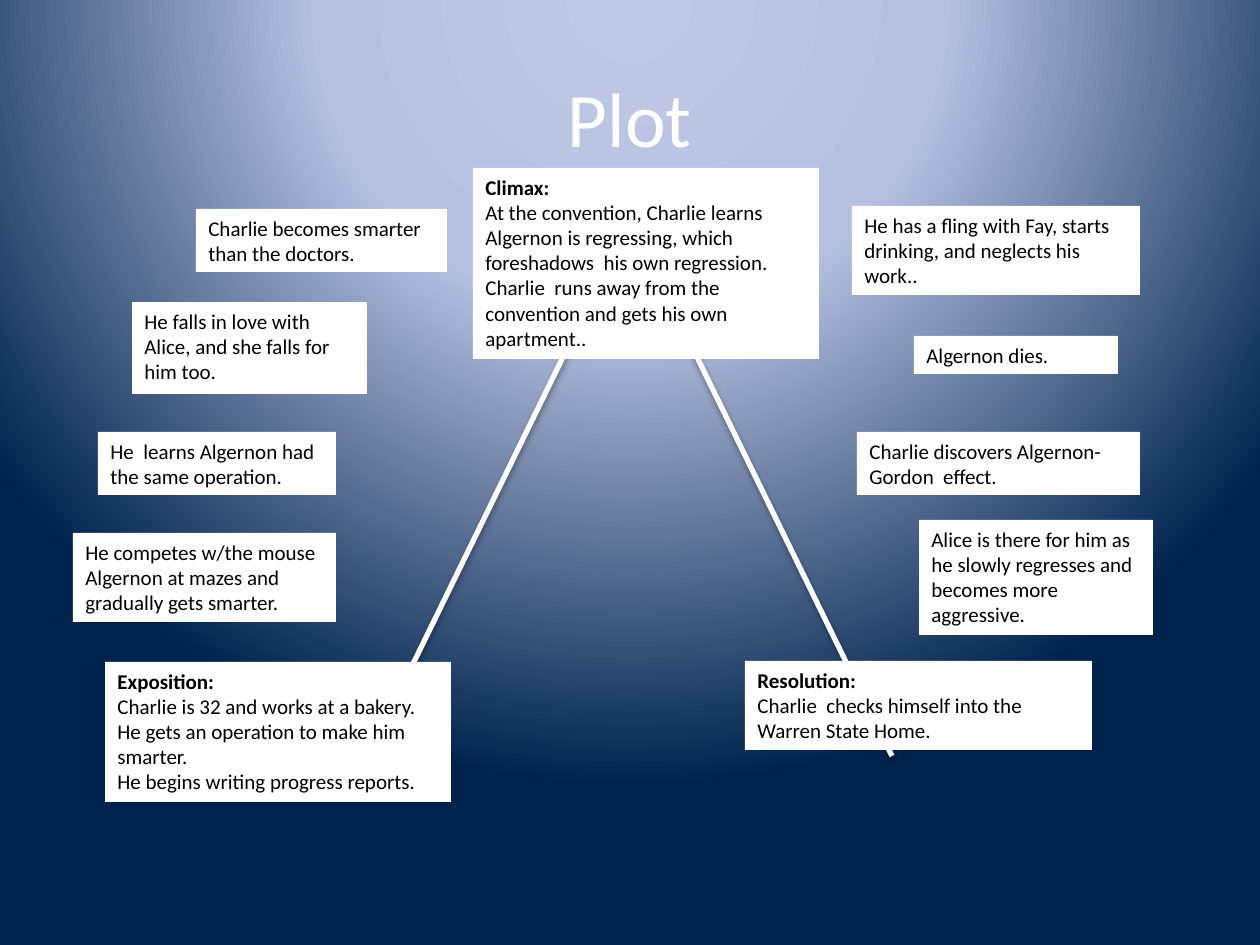
from dataclasses import dataclass

from pptx import Presentation
from pptx.dml.color import RGBColor
from pptx.enum.shapes import MSO_CONNECTOR
from pptx.enum.text import MSO_ANCHOR, MSO_AUTO_SIZE, PP_ALIGN
from pptx.oxml import parse_xml
from pptx.oxml.ns import nsdecls
from pptx.util import Pt

STRAIGHT = MSO_CONNECTOR.STRAIGHT
MIDDLE, TOP = MSO_ANCHOR.MIDDLE, MSO_ANCHOR.TOP
GROW, FIXED = MSO_AUTO_SIZE.SHAPE_TO_FIT_TEXT, MSO_AUTO_SIZE.NONE
LEFT, CENTER = PP_ALIGN.LEFT, PP_ALIGN.CENTER

EMU_PER_PX = 914400 / 126
SLIDE_WIDTH, SLIDE_HEIGHT = 1260, 945


@dataclass(frozen=True)
class Theme:
    font: str = "Calibri"
    title_size: int = 44
    body_size: int = 12
    line_width: int = 3
    white: str = "FFFFFF"
    black: str = "000000"
    glow: tuple = ((0, "BFC9E5"), (40, "B5C0E0"), (100, "00234D"))


def px(length):
    return round(length * EMU_PER_PX)


def apply(target, **values):
    for name, value in values.items():
        setattr(target, name, value)


class PlotSlide:
    def __init__(self, slide, theme):
        self.slide = slide
        self.theme = theme

    def background(self):
        """Fill the slide with a circular glow centred above its top edge."""
        stops = "".join(
            f'<a:gs pos="{percent * 1000}"><a:srgbClr val="{color}"/></a:gs>'
            for percent, color in self.theme.glow)
        self.slide.element.cSld.insert(0, parse_xml(
            f'<p:bg {nsdecls("p", "a")}><p:bgPr><a:gradFill rotWithShape="1">'
            f'<a:gsLst>{stops}</a:gsLst><a:path path="circle">'
            '<a:fillToRect l="50000" t="-80000" r="50000" b="180000"/></a:path>'
            '</a:gradFill><a:effectLst/></p:bgPr></p:bg>'))

    def text(self, bounds, lines, size, color, heading=False,
             align=LEFT, anchor=TOP, auto_size=GROW):
        box = self.slide.shapes.add_textbox(*map(px, bounds))
        frame = box.text_frame
        apply(frame, word_wrap=True, vertical_anchor=anchor, auto_size=auto_size)
        for index, line in enumerate(lines):
            para = frame.add_paragraph() if index else frame.paragraphs[0]
            para.alignment = align
            span = para.add_run()
            span.text = line
            apply(span.font, name=self.theme.font, size=Pt(size),
                  bold=heading and index == 0)
            span.font.color.rgb = RGBColor.from_string(color)
        return box

    def title(self, bounds, wording):
        self.text(bounds, [wording], self.theme.title_size, self.theme.white,
                  align=CENTER, anchor=MIDDLE, auto_size=FIXED)

    def card(self, bounds, *lines, heading=False):
        box = self.text(bounds, lines, self.theme.body_size, self.theme.black, heading)
        box.fill.solid()
        box.fill.fore_color.rgb = RGBColor.from_string(self.theme.white)

    def slope(self, start, end):
        line = self.slide.shapes.add_connector(STRAIGHT, *map(px, start + end))
        line.line.width = Pt(self.theme.line_width)
        line.line.color.rgb = RGBColor.from_string(self.theme.white)
        line.element.spPr.append(parse_xml(
            f'<a:effectLst {nsdecls("a")}><a:outerShdw blurRad="40000" dist="23000" '
            f'dir="5400000" rotWithShape="0"><a:srgbClr val="{self.theme.black}">'
            '<a:alpha val="35000"/></a:srgbClr></a:outerShdw></a:effectLst>'))


STAGES = [
    ((105, 662, 346, 140), "Exposition:", "Charlie is 32 and works at a bakery.",
     "He gets an operation to make him smarter.",
     "He begins writing progress reports."),
    ((745, 661, 347, 89), "Resolution:",
     "Charlie  checks himself into the Warren State Home."),
    ((473, 168, 346, 191), "Climax:",
     "At the convention, Charlie learns Algernon is regressing, which foreshadows  "
     "his own regression. Charlie  runs away from the convention and gets his own "
     "apartment.."),
]

RISING_ACTION = [
    ((73, 533, 263, 89),
     "He competes w/the mouse Algernon at mazes and gradually gets smarter."),
    ((98, 432, 238, 63), "He  learns Algernon had the same operation."),
    ((132, 302, 235, 92), "He falls in love with Alice, and she falls for him too."),
    ((196, 209, 251, 63), "Charlie becomes smarter than the doctors."),
]

FALLING_ACTION = [
    ((852, 206, 288, 89),
     "He has a fling with Fay, starts drinking, and neglects his work.."),
    ((914, 336, 204, 38), "Algernon dies."),
    ((857, 432, 283, 63), "Charlie discovers Algernon-Gordon  effect."),
    ((919, 520, 234, 115),
     "Alice is there for him as he slowly regresses and becomes more aggressive."),
]


def main():
    deck = Presentation()
    apply(deck, slide_width=px(SLIDE_WIDTH), slide_height=px(SLIDE_HEIGHT))
    plot = PlotSlide(deck.slides.add_slide(deck.slide_layouts[6]), Theme())
    plot.background()
    plot.title((63, 38, 1134, 157), "Plot")

    apex, foot_y, half_base = (SLIDE_WIDTH // 2, 220), 756, 262
    plot.slope((apex[0] - half_base, foot_y), apex)
    plot.slope(apex, (apex[0] + half_base, foot_y))

    for bounds, *lines in STAGES:
        plot.card(bounds, *lines, heading=True)
    for bounds, event in RISING_ACTION + FALLING_ACTION:
        plot.card(bounds, event)
    deck.save("out.pptx")


if __name__ == "__main__":
    main()
